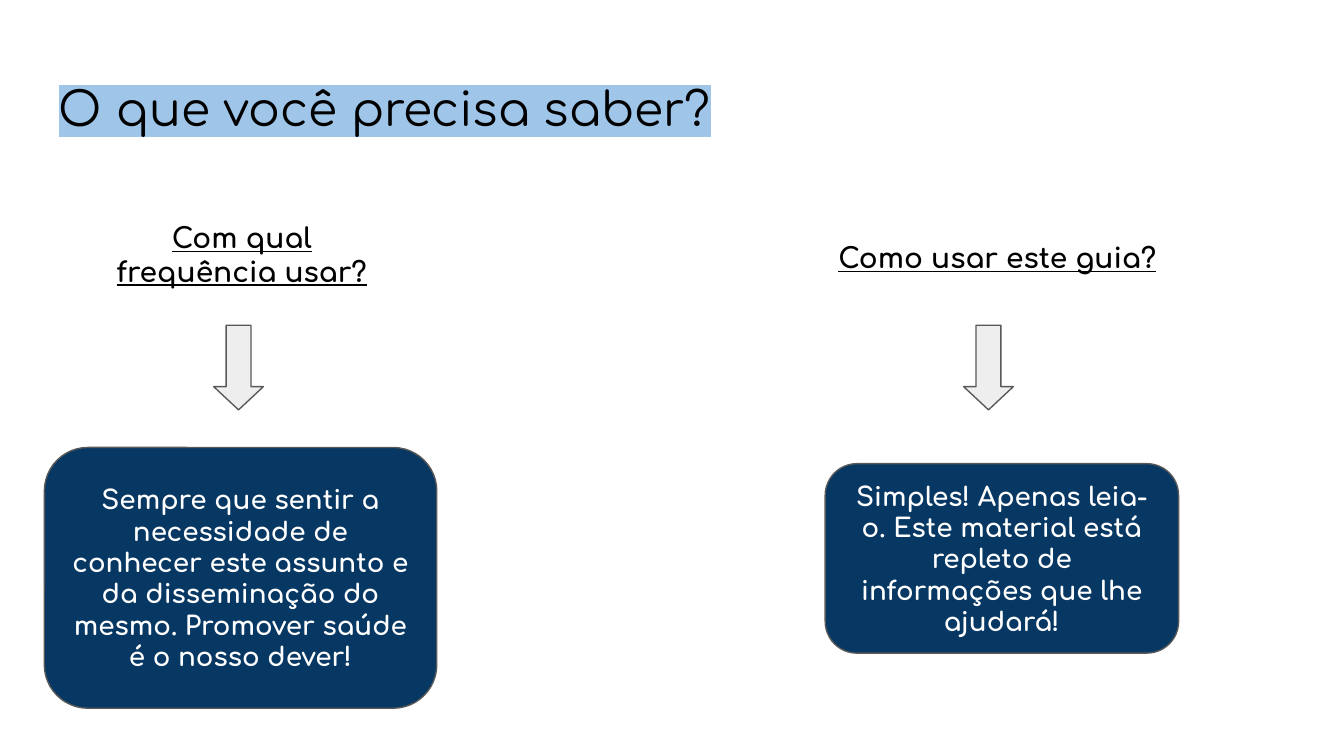
from lxml.etree import SubElement
from pptx import Presentation
from pptx.dml.color import RGBColor
from pptx.enum.shapes import MSO_SHAPE as Kind
from pptx.enum.text import MSO_ANCHOR as Anchor, PP_ALIGN as Align
from pptx.oxml.ns import qn
from pptx.util import Inches, Pt

NAVY = RGBColor(0x07, 0x37, 0x63)
SKY = RGBColor(0x9F, 0xC5, 0xE8)
PALE = RGBColor(0xEE, 0xEE, 0xEE)
GREY = RGBColor(0x59, 0x59, 0x59)
BLACK = RGBColor(0, 0, 0)
WHITE = RGBColor(0xFF, 0xFF, 0xFF)

FONT = "Comfortaa"
CELL = Inches(0.1)  # side of one grid square
COLS, ROWS = 100, 56.25


def write(shape, text, size=14, color=BLACK, bold=None, line=None,
          align=Align.LEFT, anchor=Anchor.TOP, mark=None):
    """Put formatted text into a shape; mark is a highlight colour."""
    frame = shape.text_frame
    frame.word_wrap = True
    frame.vertical_anchor = anchor
    frame.margin_left = frame.margin_right = CELL
    frame.margin_top = frame.margin_bottom = CELL
    para = frame.paragraphs[0]
    para.alignment = align
    run = para.add_run()
    run.text = text
    font = run.font
    font.size, font.bold, font.underline = Pt(size), bold, line
    font.color.rgb = color
    if mark is not None:
        # The highlight has to stand before the typeface
        glow = SubElement(font._element, qn("a:highlight"))
        SubElement(glow, qn("a:srgbClr")).set("val", str(mark))
    font.name = FONT


class Board:
    """Holds the style and the slide; places are in grid squares."""

    def __init__(self, deck):
        self.slide = deck.slides.add_slide(deck.slide_layouts[6])
        self.shapes = self.slide.shapes

    def place(self, *box):
        return [round(n * CELL) for n in box]

    def label(self, box, text, **style):
        write(self.shapes.add_textbox(*self.place(*box)), text, **style)

    def form(self, kind, box, fill, *adjust):
        shape = self.shapes.add_shape(kind, *self.place(*box))
        shape.shadow.inherit = False
        shape.fill.solid()
        shape.fill.fore_color.rgb = fill
        shape.line.color.rgb = GREY
        shape.line.width = Pt(0.75)
        for i, value in enumerate(adjust):
            shape.adjustments[i] = value
        return shape

    def card(self, box, text):
        card = self.form(Kind.ROUNDED_RECTANGLE, box, NAVY, 0.167)
        write(card, text, color=WHITE, bold=True,
              align=Align.CENTER, anchor=Anchor.MIDDLE)

    def arrow(self, left):
        self.form(Kind.DOWN_ARROW, (left, 24.2, 3.7, 6.3), PALE, 0.5, 0.466)


def main():
    deck = Presentation()
    deck.slide_width, deck.slide_height = COLS * CELL, round(ROWS * CELL)
    board = Board(deck)

    # Title
    board.label((3.4, 4.9, 93.2, 6.3), "O que você precisa saber?",
                size=25.2, mark=SKY)

    # Each column: question, arrow, answer
    columns = [
        ("Com qual frequência usar?", (7, 15.4, 22, 7.1), Align.CENTER, 15.9,
         "Sempre que sentir a necessidade de conhecer este assunto e da "
         "disseminação do mesmo. Promover saúde é o nosso dever!",
         (3.3, 33.3, 29.2, 19.4)),
        ("Como usar este guia?", (61.4, 16.9, 27.6, 6.9), Align.LEFT, 71.7,
         "Simples! Apenas leia-o. Este material está repleto de "
         "informações que lhe ajudará!",
         (61.4, 34.5, 26.3, 14.1)),
    ]
    for ask, spot, align, left, reply, box in columns:
        board.label(spot, ask, size=15, bold=True, line=True, align=align)
        board.arrow(left)
        board.card(box, reply)

    deck.save("out.pptx")


if __name__ == "__main__":
    main()
